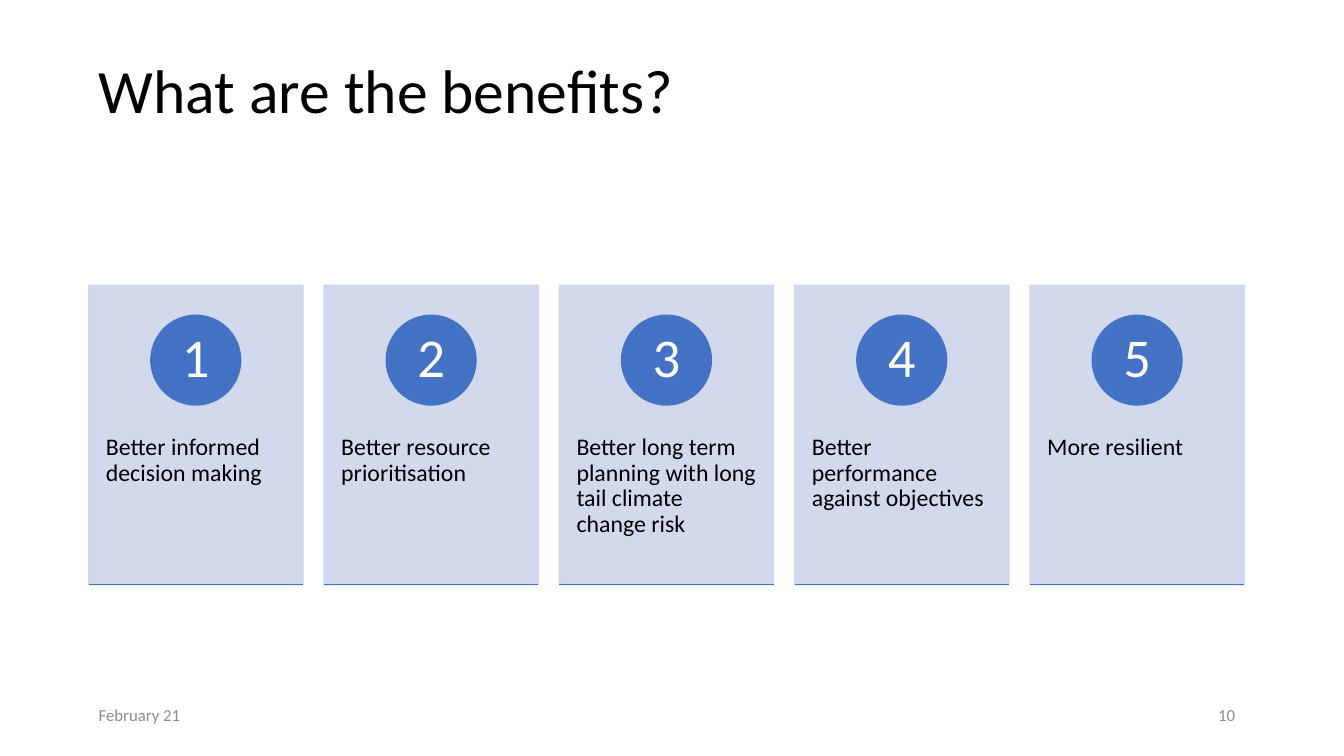
from dataclasses import dataclass

from lxml import etree
from pptx import Presentation
from pptx import util as u
from pptx.dml.color import RGBColor
from pptx.enum import shapes, text
from pptx.oxml import ns

BLUE = RGBColor(0x44, 0x72, 0xC4)
PALE_BLUE = RGBColor(0xCF, 0xD5, 0xEA)
BLACK = RGBColor(0x00, 0x00, 0x00)
WHITE = RGBColor(0xFF, 0xFF, 0xFF)
GREY = RGBColor(0x8C, 0x8C, 0x8C)
FONT = "Calibri"

BENEFITS = [
    "Better informed decision making",
    "Better resource prioritisation",
    "Better long term planning with long tail climate change risk",
    "Better performance against objectives",
    "More resilient",
]


@dataclass
class Box:
    """A rectangle in inches."""
    left: float
    top: float
    width: float
    height: float

    def lengths(self):
        return [u.Inches(v) for v in (self.left, self.top, self.width, self.height)]

    def columns(self, count, gap):
        """Split into equal columns with a fixed gap between them."""
        width = (self.width - gap * (count - 1)) / count
        return [Box(self.left + i * (width + gap), self.top, width, self.height)
                for i in range(count)]


def write(shape, words, size, colour, align=text.PP_ALIGN.LEFT,
          anchor=text.MSO_ANCHOR.MIDDLE, insets=(0.1, 0.05, 0.1, 0.05), spacing=0.9):
    frame = shape.text_frame
    frame.text = words
    frame.word_wrap = True
    frame.auto_size = text.MSO_AUTO_SIZE.NONE
    frame.vertical_anchor = anchor
    (frame.margin_left, frame.margin_top,
     frame.margin_right, frame.margin_bottom) = [u.Inches(v) for v in insets]
    para = frame.paragraphs[0]
    para.alignment = align
    para.line_spacing = spacing
    font = para.runs[0].font
    font.name, font.size, font.color.rgb = FONT, u.Pt(size), colour


def add_filled(page, kind, box, colour):
    shape = page.shapes.add_shape(kind, *box.lengths())
    shape.shadow.inherit = False
    shape.fill.solid()
    shape.fill.fore_color.rgb = colour
    shape.line.color.rgb = colour
    shape.line.width = u.Pt(1)
    return shape


def make_translucent(shape, percent):
    """Set the opacity of both fill and outline."""
    for colour in shape._element.spPr.iter(ns.qn("a:srgbClr")):
        etree.SubElement(colour, ns.qn("a:alpha"), val=str(percent * 1000))


def add_card(page, box, number, words):
    card = add_filled(page, shapes.MSO_SHAPE.RECTANGLE, box, PALE_BLUE)
    make_translucent(card, 90)
    write(card, words, 17, BLACK, anchor=text.MSO_ANCHOR.TOP,
          insets=(0.17, box.height / 2, 0.17, 0.36))

    size = box.height * 0.3
    badge_box = Box(box.left + (box.width - size) / 2, box.top + box.height * 0.1, size, size)
    badge = add_filled(page, shapes.MSO_SHAPE.OVAL, badge_box, BLUE)
    write(badge, str(number), 39, WHITE, align=text.PP_ALIGN.CENTER,
          insets=(0.07, 0.01, 0.07, 0.01))

    bottom = u.Inches(box.top + box.height)
    rule = page.shapes.add_connector(
        shapes.MSO_CONNECTOR.STRAIGHT, u.Inches(box.left), bottom,
        u.Inches(box.left + box.width), bottom)
    rule.line.color.rgb = BLUE
    rule.line.width = u.Pt(1)
    etree.SubElement(rule._element.spPr, ns.qn("a:effectLst"))


def add_cards(page, box):
    for number, (column, words) in enumerate(zip(box.columns(5, 0.21), BENEFITS), 1):
        add_card(page, column, number, words)


def add_title(page, box):
    title = page.shapes.title
    title.left, title.top, title.width, title.height = box.lengths()
    write(title, "What are the benefits?", 44, BLACK)


def add_footer(page, box):
    """Date at the left end, page number at the right end."""
    date_box = Box(box.left, box.top, 1.57, box.height)
    number_box = Box(box.left + box.width - 0.79, box.top, 0.79, box.height)
    for part, words, align in [(date_box, "February 21", text.PP_ALIGN.LEFT),
                               (number_box, "10", text.PP_ALIGN.RIGHT)]:
        label = page.shapes.add_textbox(*part.lengths())
        write(label, words, 12, GREY, align=align, spacing=1.0)


def main():
    deck = Presentation()
    deck.slide_width, deck.slide_height = u.Inches(13.33), u.Inches(7.5)
    page = deck.slides.add_slide(deck.slide_layouts.get_by_name("Title Only"))
    add_title(page, Box(0.88, 0.3, 8.78, 1.26))
    add_cards(page, Box(0.88, 2.83, 11.46, 2.97))
    add_footer(page, Box(0.88, 6.97, 11.47, 0.24))
    deck.save("out.pptx")


if __name__ == "__main__":
    main()
